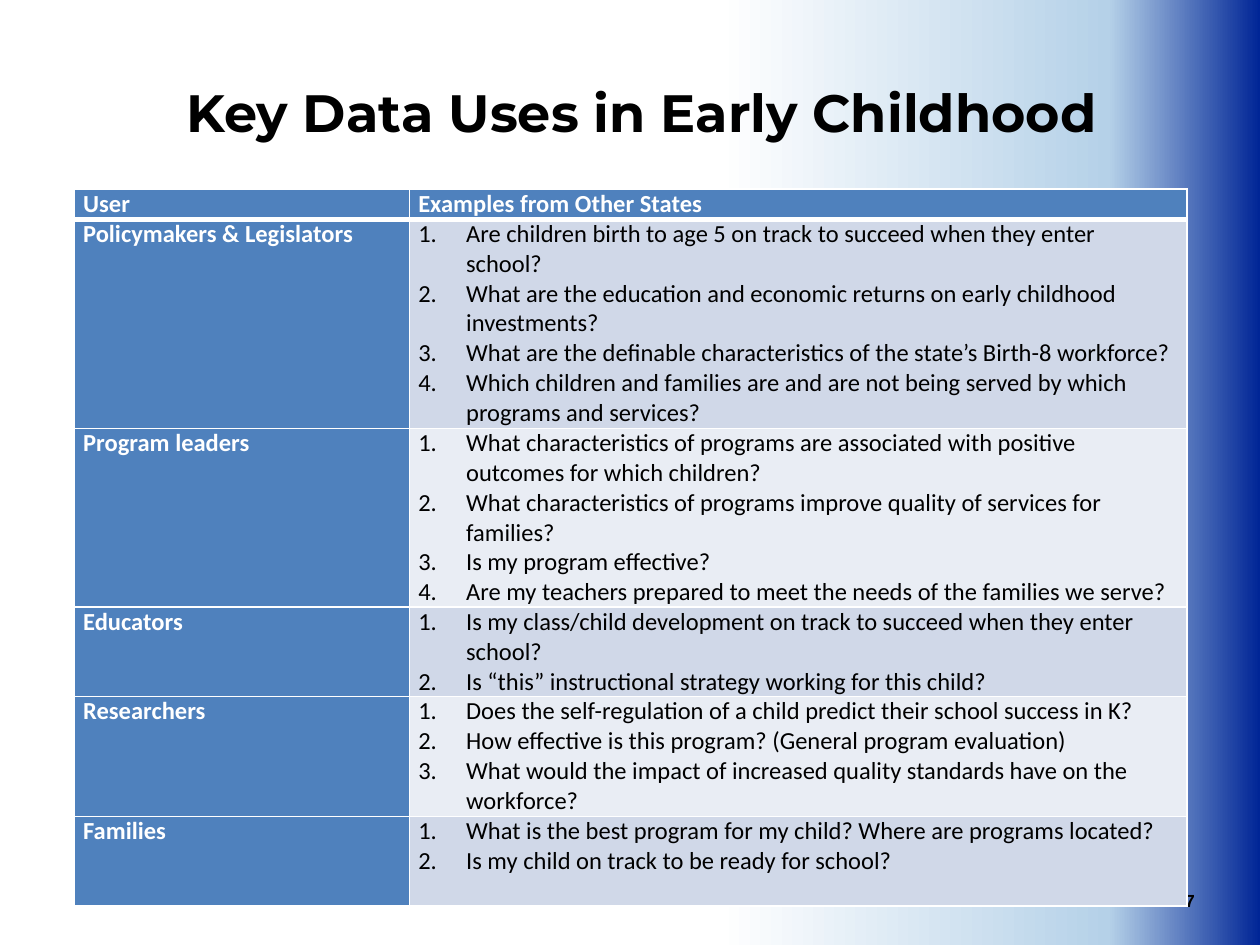
import pptx
import pptx.dml.color
import pptx.enum.text
import pptx.oxml
import pptx.oxml.ns
import pptx.util
from pptx.util import Inches

HEADER = ("User", "Examples from Other States")
USES = [
    ("Policymakers & Legislators", 1.66, [
        "Are children birth to age 5 on track to succeed when they enter school?",
        "What are the education and economic returns on early childhood investments?",
        "What are the definable characteristics of the state’s Birth-8 workforce?",
        "Which children and families are and are not being served by which programs and services?",
    ]),
    ("Program leaders", 1.42, [
        "What characteristics of programs are associated with positive outcomes for which children?",
        "What characteristics of programs improve quality of services for families?",
        "Is my program effective?",
        "Are my teachers prepared to meet the needs of the families we serve?",
    ]),
    ("Educators", 0.71, [
        "Is my class/child development on track to succeed when they enter school?",
        "Is “this” instructional strategy working for this child?",
    ]),
    ("Researchers", 0.95, [
        "Does the self-regulation of a child predict their school success in K?",
        "How effective is this program? (General program evaluation)",
        "What would the impact of increased quality standards have on the workforce?",
    ]),
    ("Families", 0.71, [
        "What is the best program for my child? Where are programs located?",
        "Is my child on track to be ready for school?",
    ]),
]
BLUE, BANDS = "4F81BD", ("D0D8E8", "E9EDF4")
WHITE, BLACK = "FFFFFF", "000000"
BACKGROUND_STOPS = [(0, "002596"), (12, "B5D1E8"), (43, WHITE)]
NAMESPACE = pptx.oxml.ns.nsdecls("a")


def color(value):
    return pptx.dml.color.RGBColor.from_string(value)


def style(para, size, name, value, bold):
    font = para.font
    font.size, font.name, font.bold = pptx.util.Pt(size), name, bold
    font.color.rgb = color(value)


def paint_background(page):
    fill = page.background.fill
    fill.gradient()
    fill.gradient_angle = 180
    stops = page.element.find(".//" + pptx.oxml.ns.qn("a:gsLst"))
    for stop in list(stops):
        stops.remove(stop)
    for position, value in BACKGROUND_STOPS:
        alpha = '<a:alpha val="74000"/>' if position == 0 else ""
        stops.append(pptx.oxml.parse_xml(
            f'<a:gs {NAMESPACE} pos="{position * 1000}">'
            f'<a:srgbClr val="{value}">{alpha}</a:srgbClr></a:gs>'))


def place_title(page, left, top, width, height):
    title = page.shapes.title
    title.left, title.top, title.width, title.height = left, top, width, height
    frame = title.text_frame
    frame.text = "Key Data Uses in Early Childhood"
    frame.vertical_anchor = pptx.enum.text.MSO_ANCHOR.MIDDLE
    frame.paragraphs[0].alignment = pptx.enum.text.PP_ALIGN.LEFT
    style(frame.paragraphs[0], 30, "Montserrat", BLACK, True)


def place_page_number(page, left, top, width, height):
    frame = page.shapes.add_textbox(left, top, width, height).text_frame
    frame.word_wrap = True
    frame.vertical_anchor = pptx.enum.text.MSO_ANCHOR.MIDDLE
    frame.text = "7"
    frame.paragraphs[0].alignment = pptx.enum.text.PP_ALIGN.RIGHT
    style(frame.paragraphs[0], 10, "Arial", BLACK, True)


def number(para):
    properties = para._p.get_or_add_pPr()
    indent = Inches(0.38)
    properties.set("marL", str(indent))
    properties.set("indent", str(-indent))
    properties.append(pptx.oxml.parse_xml(
        f'<a:buFont {NAMESPACE} typeface="+mj-lt"/>'))
    properties.append(pptx.oxml.parse_xml(
        f'<a:buAutoNum {NAMESPACE} type="arabicPeriod"/>'))


def fill_cell(cell, lines, fill, text_color, bold, numbered=False, bottom=1):
    cell.margin_left, cell.margin_right = Inches(0.07), Inches(0.12)
    cell.margin_top = cell.margin_bottom = 0
    properties = cell._tc.get_or_add_tcPr()
    for side, points in (("L", 1), ("R", 1), ("T", 1), ("B", bottom)):
        properties.append(pptx.oxml.parse_xml(
            f'<a:ln{side} {NAMESPACE} w="{pptx.util.Pt(points)}"><a:solidFill>'
            f'<a:srgbClr val="{WHITE}"/></a:solidFill></a:ln{side}>'))
    cell.fill.solid()
    cell.fill.fore_color.rgb = color(fill)
    cell.text_frame.text = "\n".join(lines)
    for para in cell.text_frame.paragraphs:
        if numbered:
            number(para)
        style(para, 14, "Calibri", text_color, bold)


def place_uses_table(page, left, top, width, height):
    table = page.shapes.add_table(
        len(USES) + 1, 2, left, top, width, height).table
    table.columns[0].width = Inches(2.66)
    table.columns[1].width = width - Inches(2.66)

    # Header row
    table.rows[0].height = Inches(0.24)
    for column, label in enumerate(HEADER):
        fill_cell(table.cell(0, column), [label], BLUE, WHITE, True, bottom=3)

    # One row for each kind of user
    for row, (user, row_height, questions) in enumerate(USES, 1):
        table.rows[row].height = Inches(row_height)
        fill_cell(table.cell(row, 0), [user], BLUE, WHITE, True)
        fill_cell(table.cell(row, 1), questions, BANDS[(row - 1) % 2],
                  BLACK, False, numbered=True)


def main():
    deck = pptx.Presentation()
    deck.slide_width, deck.slide_height = Inches(10), Inches(7.5)
    page = deck.slides.add_slide(deck.slide_layouts[5])
    paint_background(page)
    place_title(page, Inches(1.38), Inches(0.26), Inches(8), Inches(1.25))
    place_page_number(page, Inches(9.09), Inches(6.95), Inches(0.49), Inches(0.4))
    place_uses_table(page, Inches(0.59), Inches(1.5), Inches(8.83), Inches(5.69))
    deck.save("out.pptx")


if __name__ == "__main__":
    main()
